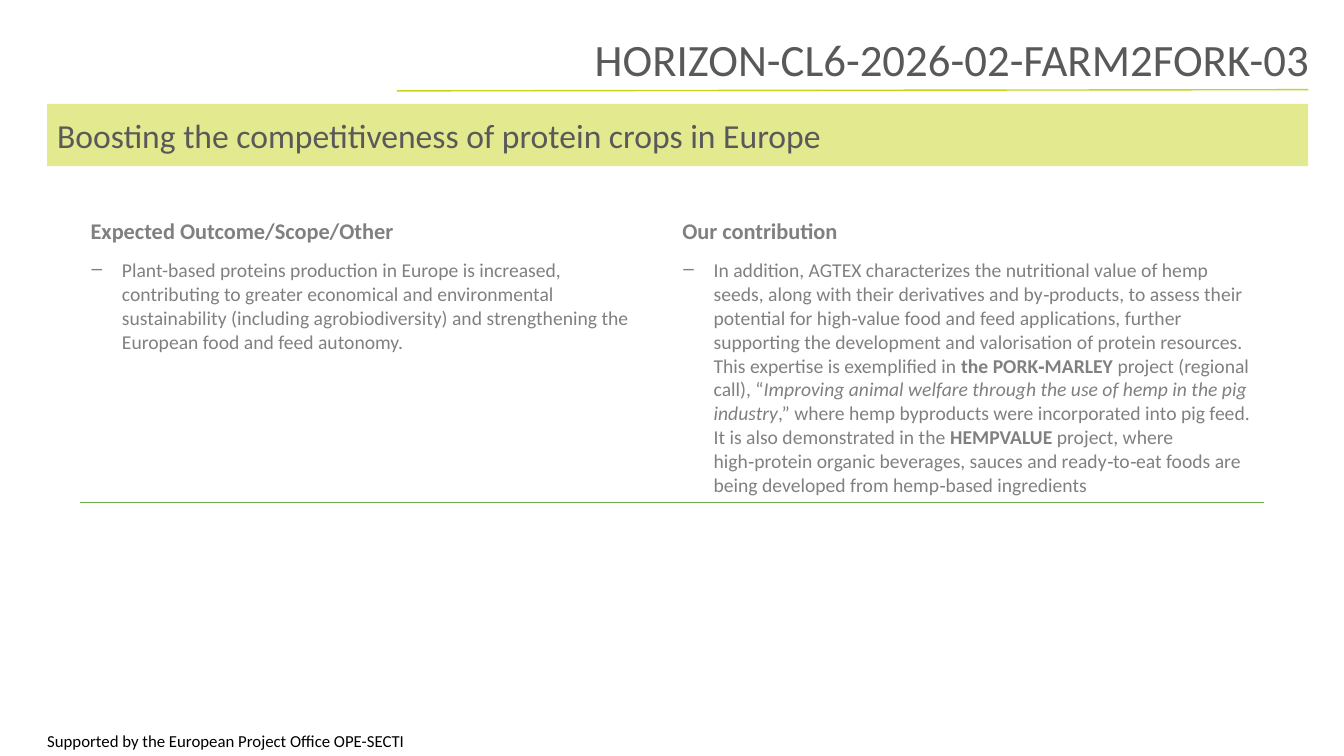
from lxml.etree import SubElement
from pptx import Presentation
from pptx.dml.color import RGBColor
from pptx.enum.shapes import MSO_CONNECTOR, MSO_SHAPE
from pptx.enum.text import MSO_ANCHOR, PP_ALIGN
from pptx.oxml import parse_xml
from pptx.oxml.ns import nsdecls, qn
from pptx.util import Cm, Pt

LIME = RGBColor(0xC7, 0xD4, 0x1E)
GREEN = RGBColor(0x70, 0xAD, 0x47)
DARK = RGBColor(0x59, 0x59, 0x59)
GREY = RGBColor(0x80, 0x80, 0x80)
BLACK = RGBColor(0, 0, 0)
WHITE = RGBColor(0xFF, 0xFF, 0xFF)

HEADS = ["Expected Outcome/Scope/Other", "Our contribution"]
# Each cell is a list of (text, style) runs: "b" bold, "i" italic.
BODIES = [
    [("Plant-based proteins production in Europe is increased, contributing to "
      "greater economical and environmental sustainability (including "
      "agrobiodiversity) and strengthening the European food and feed autonomy.", "")],
    [("In addition, AGTEX characterizes the nutritional value of hemp seeds, along "
      "with their derivatives and by‑products, to assess their potential for "
      "high‑value food and feed applications, further supporting the development "
      "and valorisation of protein resources. This expertise is exemplified in ", ""),
     ("the PORK‑MARLEY ", "b"),
     ("project (regional call), “", ""),
     ("Improving animal welfare through the use of hemp in the pig industry", "i"),
     (",” where hemp byproducts were incorporated into pig feed. It is also "
      "demonstrated in the ", ""),
     ("HEMPVALUE", "b"),
     (" project, where high‑protein organic beverages, sauces and ready‑to‑eat "
      "foods are being developed from hemp‑based ingredients", "")],
]


class Page:
    def __init__(self, slide, face="Calibri"):
        self.shapes = slide.shapes
        self.face = face

    def put(self, para, runs, size, color, bold=None, align=PP_ALIGN.LEFT):
        """Set a paragraph's font and add its styled runs."""
        para.alignment = align
        font = para.font
        font.name, font.size, font.bold = self.face, Pt(size), bold
        font.color.rgb = color
        for words, style in runs:
            run = para.add_run()
            run.text = words
            if "b" in style:
                run.font.bold = True
            if "i" in style:
                run.font.italic = True

    def tint(self, fill, holder, color, alpha):
        """Fill with a colour that is alpha percent opaque."""
        fill.solid()
        fill.fore_color.rgb = color
        tone = holder.find(qn("a:solidFill")).find(qn("a:srgbClr"))
        SubElement(tone, qn("a:alpha")).set("val", str(alpha * 1000))

    def text(self, box, words, size, color, space, align=PP_ALIGN.LEFT,
             anchor=MSO_ANCHOR.TOP):
        frame = self.shapes.add_textbox(*map(Cm, box)).text_frame
        frame.word_wrap = True
        frame.vertical_anchor = anchor
        para = frame.paragraphs[0]
        para.line_spacing = space
        self.put(para, [(words, "")], size, color, align=align)

    def line(self, ends, color):
        rule = self.shapes.add_connector(MSO_CONNECTOR.STRAIGHT, *map(Cm, ends))
        rule.line.color.rgb = color
        rule.line.width = Pt(1)
        SubElement(rule._element.spPr, qn("a:effectLst"))

    def band(self, box, words, size):
        shape = self.shapes.add_shape(MSO_SHAPE.RECTANGLE, *map(Cm, box))
        shape.shadow.inherit = False
        self.tint(shape.fill, shape._element.spPr, LIME, 50)
        shape.line.fill.background()
        frame = shape.text_frame
        frame.word_wrap = True
        frame.vertical_anchor = MSO_ANCHOR.MIDDLE
        self.put(frame.paragraphs[0], [(words, "")], size, DARK)

    def dash(self, para):
        """Hang the paragraph on a dash bullet."""
        props = para._p.get_or_add_pPr()
        props.set("marL", str(Cm(0.79)))
        props.set("indent", str(-Cm(0.79)))
        SubElement(props, qn("a:buChar")).set("char", "‒")

    def edge(self, cell, color):
        """Draw the bottom border of a cell."""
        cell._tc.get_or_add_tcPr().insert(0, parse_xml(
            f'<a:lnB {nsdecls("a")} w="{Pt(1)}"><a:solidFill>'
            f'<a:srgbClr val="{color}"/></a:solidFill></a:lnB>'))

    def table(self, box, tall, heads, bodies):
        table = self.shapes.add_table(2, len(heads), *map(Cm, box)).table
        table.first_row = table.horz_banding = False
        for row, height in zip(table.rows, tall):
            row.height = Cm(height)
        for col, (head, body) in enumerate(zip(heads, bodies)):
            top, low = table.cell(0, col), table.cell(1, col)
            top.fill.background()
            self.put(top.text_frame.paragraphs[0], [(head, "")], 16, GREY, True)
            self.tint(low.fill, low._tc.get_or_add_tcPr(), WHITE, 20)
            self.edge(low, GREEN)
            para = low.text_frame.paragraphs[0]
            self.dash(para)
            self.put(para, body, 14, GREY)


def main():
    deck = Presentation()
    deck.slide_width, deck.slide_height = Cm(33.87), Cm(19.05)
    page = Page(deck.slides.add_slide(deck.slide_layouts[6]))
    page.text((0.94, 18.24, 9.86, 0.81),
              "Supported by the European Project Office OPE-SECTI", 12, BLACK, 1.1)
    page.line((10, 2.29, 32.97, 2.26), LIME)
    page.text((9.75, 0.46, 23.5, 1.83), "HORIZON-CL6-2026-02-FARM2FORK-03", 32, DARK,
              0.9, PP_ALIGN.RIGHT, MSO_ANCHOR.BOTTOM)
    page.band((1.19, 2.62, 31.78, 1.57),
              "Boosting the competitiveness of protein crops in Europe", 24)
    page.table((2.03, 5.36, 29.82, 7.31), (1.04, 6.27), HEADS, BODIES)
    deck.save("out.pptx")


if __name__ == "__main__":
    main()
